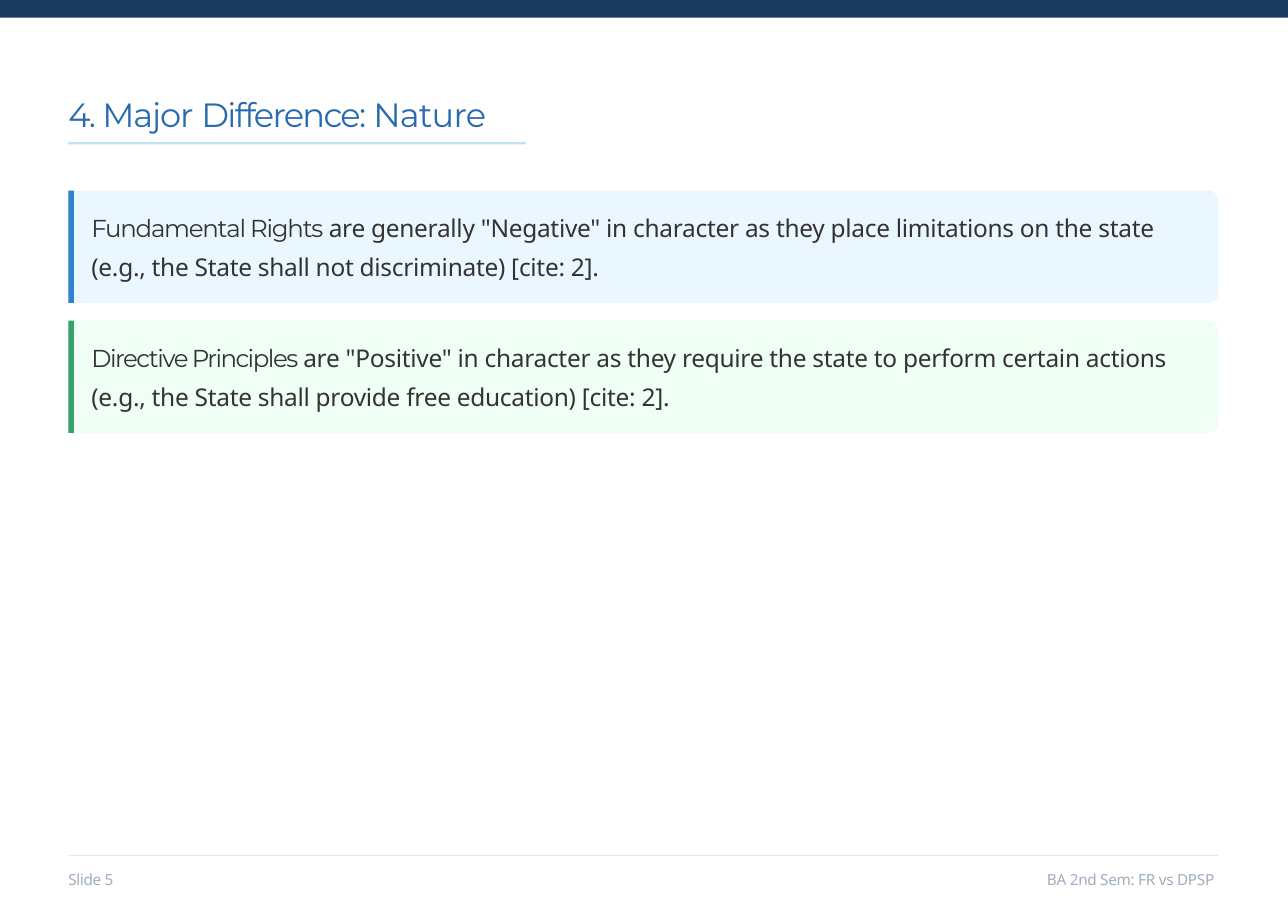
import pptx
import pptx.dml.color
import pptx.enum.shapes
import pptx.enum.text
import pptx.util

Inches = pptx.util.Inches
ALIGN = pptx.enum.text.PP_ALIGN
HEAD, BODY = "Montserrat", "Noto Sans"
HEX = {
    "navy": "1A3A5E", "title": "2A6BAF", "rule": "BDE2F7", "text": "333333",
    "blue": "3182CD", "sky": "EBF7FF", "green": "38A169", "mint": "EFFFF4",
    "line": "E2E8EF", "grey": "A0AEBF",
}
LEFT, WIDE = 0.62, 10.44


class Deck:
    def __init__(self, wide, high):
        self.file = pptx.Presentation()
        self.file.slide_width = Inches(wide)
        self.file.slide_height = Inches(high)
        self.slide = self.file.slides.add_slide(self.file.slide_layouts[6])

    def tint(self, name):
        return pptx.dml.color.RGBColor.from_string(HEX[name])

    def paint(self, shape, fill):
        shape.shadow.inherit = False
        shape.fill.solid()
        shape.fill.fore_color.rgb = self.tint(fill)
        shape.line.fill.background()

    def bar(self, x, y, w, h, fill):
        kind = pptx.enum.shapes.MSO_SHAPE.RECTANGLE
        box = map(Inches, (x, y, w, h))
        self.paint(self.slide.shapes.add_shape(kind, *box), fill)

    def panel(self, x, y, w, h, fill):
        """Panel with square left corners and rounded right corners."""
        turn = [(0.09, 0), (0.05, 0.01), (0.03, 0.03), (0.01, 0.05), (0, 0.09)]
        upper = [(x + w - a, y + b) for a, b in turn]
        lower = [(x + w - a, y + h - b) for a, b in reversed(turn)]
        form = self.slide.shapes.build_freeform(Inches(x), Inches(y), 1)
        edge = upper + lower + [(x, y + h)]
        form.add_line_segments([(Inches(a), Inches(b)) for a, b in edge])
        self.paint(form.convert_to_shape(), fill)

    def text(self, x, y, w, h, runs, size, color, face=None, align=ALIGN.LEFT,
             lead=None):
        """Each run is (words, letter spacing in points, font or None)."""
        box = self.slide.shapes.add_textbox(*map(Inches, (x, y, w, h)))
        frame = box.text_frame
        frame.word_wrap = True
        frame.margin_left = frame.margin_right = 0
        frame.margin_top = frame.margin_bottom = 0
        para = frame.paragraphs[0]
        para.alignment = align
        para.line_spacing = lead
        para.font.size = pptx.util.Pt(size)
        para.font.color.rgb = self.tint(color)
        para.font.name = face
        for words, space, font in runs:
            run = para.add_run()
            run.text = words
            run.font.name = font
            run._r.get_or_add_rPr().set("spc", str(round(space * 100)))

    def card(self, y, fill, edge, term, space, rest):
        self.panel(LEFT, y, WIDE, 1.02, fill)
        self.bar(LEFT, y, 0.05, 1.02, edge)
        runs = [(term, space, HEAD), (rest, -0.18, BODY)]
        self.text(0.83, y + 0.12, 9.79, 0.8, runs, 16, "text", lead=1.33)


def main():
    deck = Deck(11.69, 8.27)

    # Top band and title
    deck.bar(0, 0, 11.69, 0.16, "navy")
    title = [("4. ", -1.6, None), ("Major ", -0.7, None),
             ("Difference: ", -1.1, None), ("Nature", -0.5, None)]
    deck.text(LEFT, 0.85, 4.18, 0.39, title, 22, "title", HEAD)
    deck.bar(LEFT, 1.29, 4.15, 0.02, "rule")

    # Cards
    cards = [
        ("sky", "blue", "Fundamental Rights ", -0.78,
         'are generally "Negative" in character as they place limitations on '
         "the state (e.g., the State shall not discriminate) [cite: 2]."),
        ("mint", "green", "Directive Principles ", -0.95,
         'are "Positive" in character as they require the state to perform '
         "certain actions (e.g., the State shall provide free education) "
         "[cite: 2]."),
    ]
    for i, card in enumerate(cards):
        deck.card(1.73 + i * 1.18, *card)

    # Footer
    deck.bar(LEFT, 7.76, WIDE, 0.01, "line")
    deck.text(LEFT, 7.9, 0.8, 0.2, [("Slide 5", -0.2, None)], 10, "grey", BODY)
    deck.text(9.02, 7.9, 2, 0.2, [("BA 2nd Sem: FR vs DPSP", -0.18, None)],
              10, "grey", BODY, ALIGN.RIGHT)

    deck.file.save("out.pptx")


if __name__ == "__main__":
    main()
